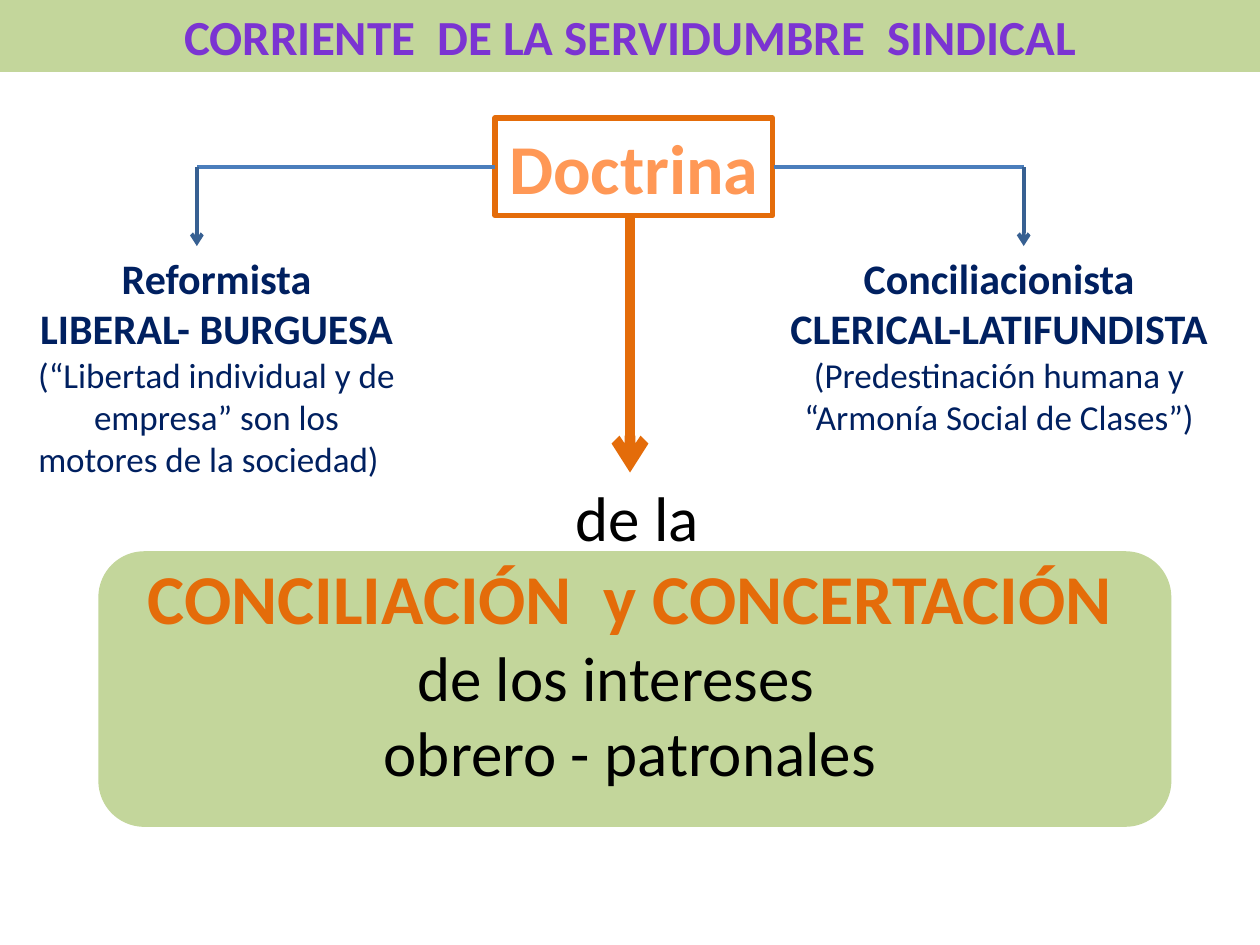
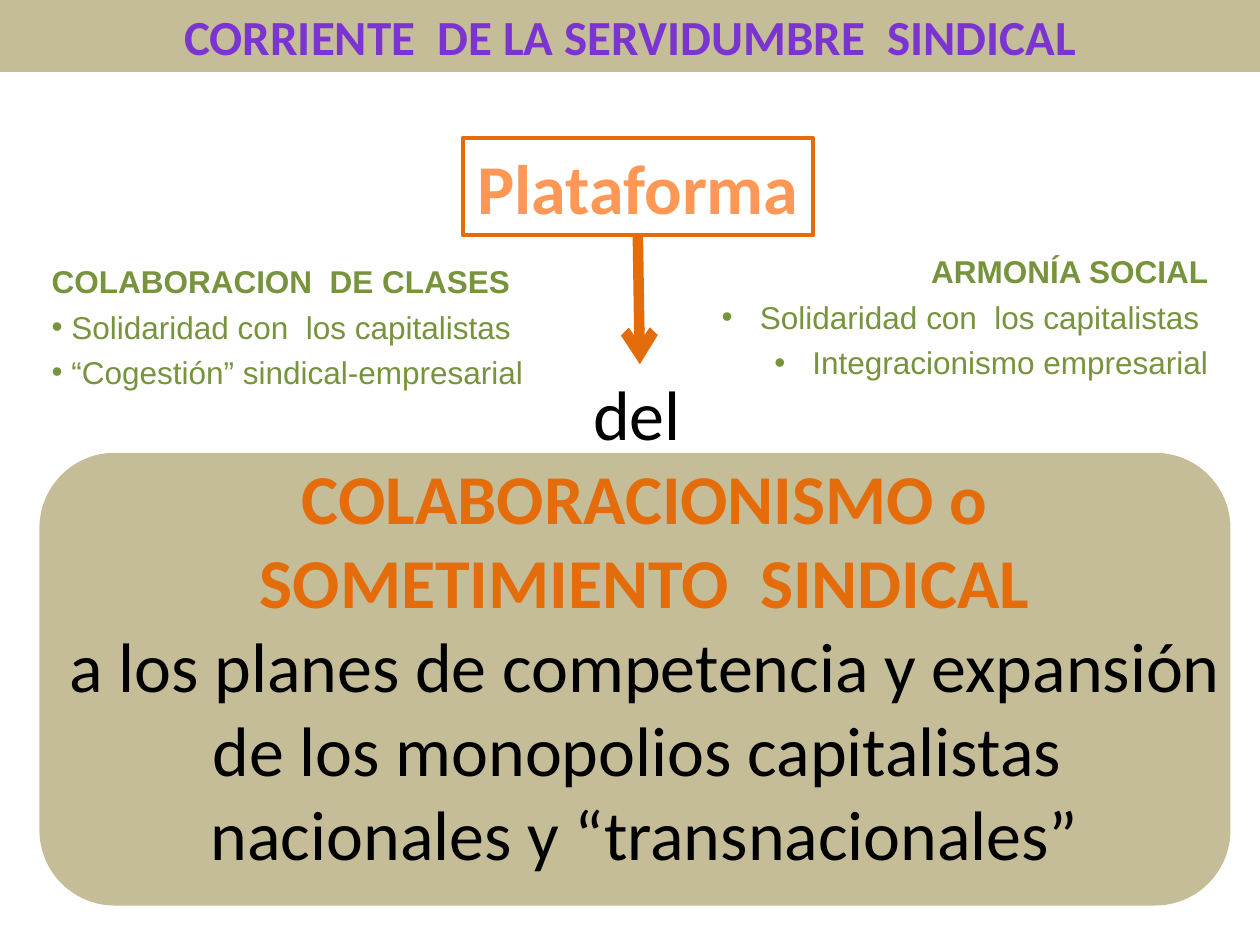
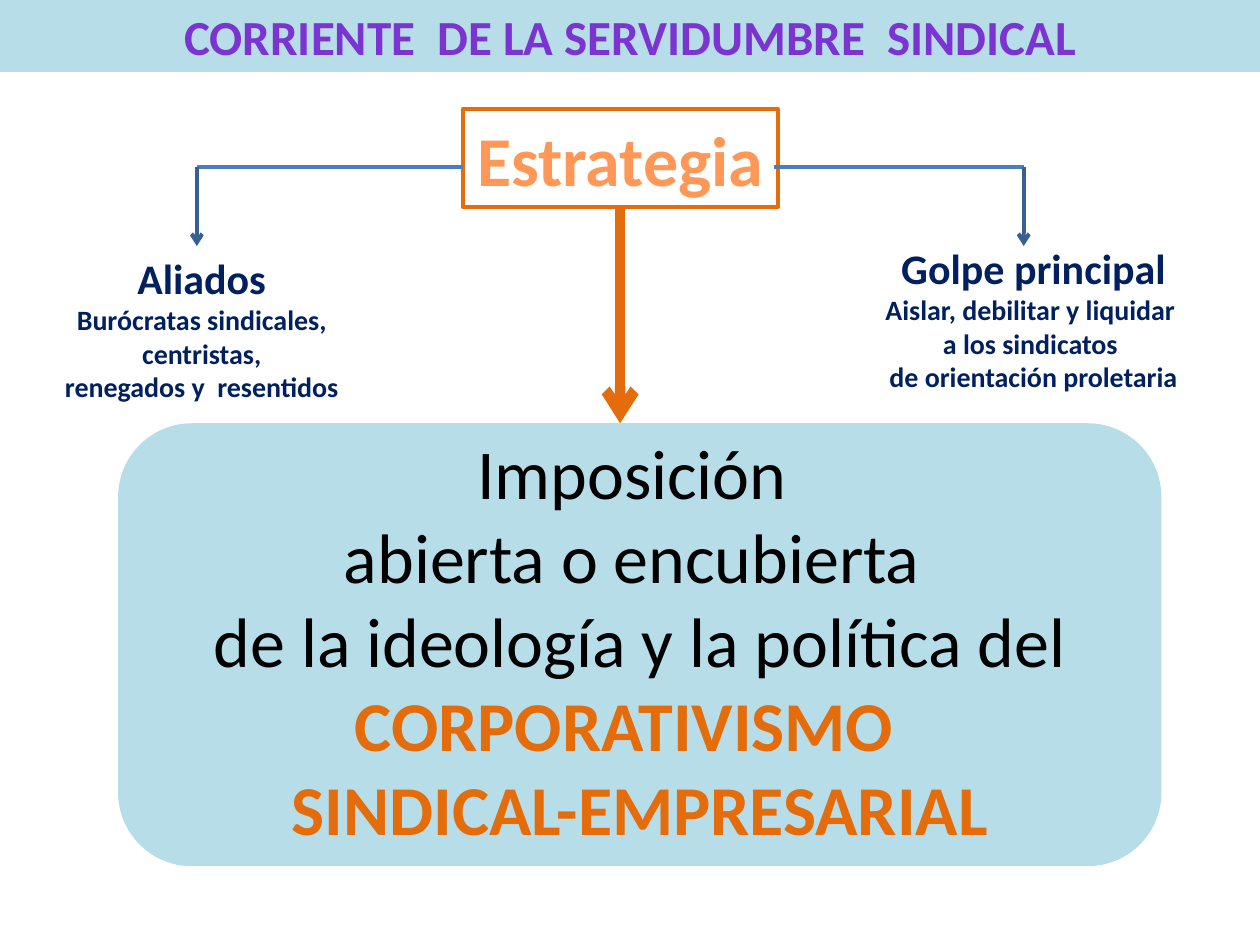
from lxml.etree import SubElement
from pptx import Presentation
from pptx.dml.color import RGBColor
from pptx.enum.shapes import MSO_CONNECTOR, MSO_SHAPE
from pptx.enum.text import MSO_AUTO_SIZE, PP_ALIGN
from pptx.oxml.ns import qn
from pptx.util import Inches, Pt

COLS = 128
UNIT = Inches(10) / COLS
HEAD = "CORRIENTE  DE LA SERVIDUMBRE  SINDICAL"

GREEN = RGBColor(0xC3, 0xD6, 0x9B)
SAND = RGBColor(0xC4, 0xBD, 0x97)
SKY = RGBColor(0xB7, 0xDE, 0xE8)
VIOLET = RGBColor(0x7B, 0x34, 0xD2)
ORANGE = RGBColor(0xE4, 0x6C, 0x0A)
PEACH = RGBColor(0xFF, 0x98, 0x56)
NAVY = RGBColor(0x00, 0x20, 0x60)
BLUE = RGBColor(0x4B, 0x7E, 0xBC)
STEEL = RGBColor(0x37, 0x60, 0x92)
OLIVE = RGBColor(0x77, 0x93, 0x3C)
BLACK = RGBColor(0, 0, 0)


def grid(*cells):
    return [round(cell * UNIT) for cell in cells]


def put(frame, text, size=40, color=BLACK, bold=False, font="Calibri",
        align=PP_ALIGN.CENTER, before=0, bullet=False, hang=0):
    for line in text.split("\n"):
        first = frame.paragraphs[0]
        para = frame.add_paragraph() if first.runs else first
        para.alignment = align
        if before:
            para.space_before = Pt(before)
        if bullet:
            props = para._p.get_or_add_pPr()
            inset, = grid(hang)
            props.set("marL", str(inset))
            props.set("indent", str(-inset))
            SubElement(props, qn("a:buFont")).set("typeface", "Arial")
            SubElement(props, qn("a:buChar")).set("char", "•")
        run = para.add_run()
        run.text = line
        run.font.name = font
        run.font.size = Pt(size)
        run.font.bold = bold
        run.font.color.rgb = color


class Deck:
    def __init__(self):
        self.show = Presentation()
        self.show.slide_width, self.show.slide_height = grid(COLS, COLS * 3 / 4)

    def page(self, tint, area):
        self.slide = self.show.slides.add_slide(self.show.slide_layouts[6])
        self.shape(area, MSO_SHAPE.ROUNDED_RECTANGLE, fill=tint)
        band = self.shape((0, 0, COLS, 7.3), fill=tint)
        put(band.text_frame, HEAD, size=28, color=VIOLET, bold=True)

    def shape(self, area, kind=MSO_SHAPE.RECTANGLE, fill=None, line=None, width=1):
        shape = self.slide.shapes.add_shape(kind, *grid(*area))
        shape.shadow.inherit = False
        if fill is None:
            shape.fill.background()
        else:
            shape.fill.solid()
            shape.fill.fore_color.rgb = fill
        if line is None:
            shape.line.fill.background()
        else:
            shape.line.color.rgb = line
            shape.line.width = Pt(width)
        return shape

    def topic(self, text, left, top, wide, width=2.25):
        box = self.shape((left, top, wide, 9.9), line=ORANGE, width=width)
        box.text_frame.word_wrap = False
        put(box.text_frame, text, color=PEACH, bold=True)

    def text(self, *area):
        frame = self.slide.shapes.add_textbox(*grid(*area)).text_frame
        frame.word_wrap = True
        frame.auto_size = MSO_AUTO_SIZE.SHAPE_TO_FIT_TEXT
        return frame

    def line(self, *ends, color=BLUE, width=2.25, arrow=False):
        link = self.slide.shapes.add_connector(MSO_CONNECTOR.STRAIGHT, *grid(*ends))
        link.line.color.rgb = color
        link.line.width = Pt(width)
        if arrow:
            SubElement(link.line._get_or_add_ln(), qn("a:tailEnd")).set("type", "arrow")
        SubElement(link._element.spPr, qn("a:effectLst"))

    def drop(self, *ends):
        self.line(*ends, color=ORANGE, width=6, arrow=True)

    def forks(self, left, right):
        for start, end in ((left, 20), (right, 104)):
            self.line(start, 17, end, 17)
            self.line(end, 17, end, 25, color=STEEL, arrow=True)

    def branch(self, area, title, note, size=20, bold=False):
        frame = self.text(*area)
        put(frame, title, size=24, color=NAVY, bold=True)
        put(frame, note, size=size, color=NAVY, bold=bold)

    def points(self, area, title, items, align, hang):
        frame = self.text(*area)
        style = dict(size=18, color=OLIVE, font="Arial", align=align, before=4.4)
        put(frame, title, bold=True, **style)
        put(frame, items, bullet=True, hang=hang, **style)


def doctrine(deck):
    deck.page(GREEN, (10, 56, 109, 28))
    deck.branch((0, 25, 44, 24.6), "Reformista\nLIBERAL- BURGUESA",
                "(“Libertad individual y de empresa” son los\nmotores de la sociedad)  ")
    body = deck.text(11, 48, 106, 33.2)
    put(body, " de la", size=36)
    put(body, "CONCILIACIÓN  y CONCERTACIÓN", color=ORANGE, bold=True)
    put(body, "de los intereses  \nobrero - patronales", size=36)
    deck.topic("Doctrina", 50.3, 12, 28.2, width=3)
    deck.branch((77, 25, 49, 20.2), "Conciliacionista\nCLERICAL-LATIFUNDISTA",
                "(Predestinación humana y\n“Armonía Social de Clases”)")
    deck.forks(50.3, 78.6)
    deck.drop(64, 21.9, 64, 48)


def platform(deck):
    deck.page(SAND, (4, 46, 121, 46))
    deck.topic("Plataforma", 47, 14, 35.6)
    body = deck.text(5, 37, 121, 53)
    put(body, "del ")
    put(body, "COLABORACIONISMO o SOMETIMIENTO  SINDICAL", color=ORANGE, bold=True)
    put(body, "a los planes de competencia y expansión\n"
              "de los monopolios capitalistas \nnacionales y “transnacionales”")
    deck.drop(64.8, 23.9, 65, 37)
    deck.points((4, 26, 64, 14.5), "COLABORACION  DE CLASES",
                " Solidaridad con  los capitalistas\n “Cogestión” sindical-empresarial",
                PP_ALIGN.LEFT, 0)
    deck.points((69, 25, 55, 14.5), "ARMONÍA SOCIAL",
                " Solidaridad con  los capitalistas \n Integracionismo empresarial",
                PP_ALIGN.RIGHT, 3)


def strategy(deck):
    deck.page(SKY, (12, 43, 106, 45))
    body = deck.text(12, 43, 106, 44.4)
    put(body, "Imposición \nabierta o encubierta \nde la ideología y la política del")
    put(body, "CORPORATIVISMO  \nSINDICAL-EMPRESARIAL", color=ORANGE, bold=True)
    deck.topic("Estrategia", 47, 11.1, 32)
    deck.forks(47, 78.6)
    deck.drop(63, 21, 63, 43)
    deck.branch((1, 25, 39, 16.8), "Aliados",
                "Burócratas sindicales, centristas,\nrenegados y  resentidos",
                size=16, bold=True)
    deck.branch((87, 24, 36, 16.8), "Golpe principal",
                "Aislar, debilitar y liquidar \na los sindicatos \nde orientación proletaria",
                size=16, bold=True)


def main():
    deck = Deck()
    for build in (doctrine, platform, strategy):
        build(deck)
    deck.show.save("out.pptx")


if __name__ == "__main__":
    main()
